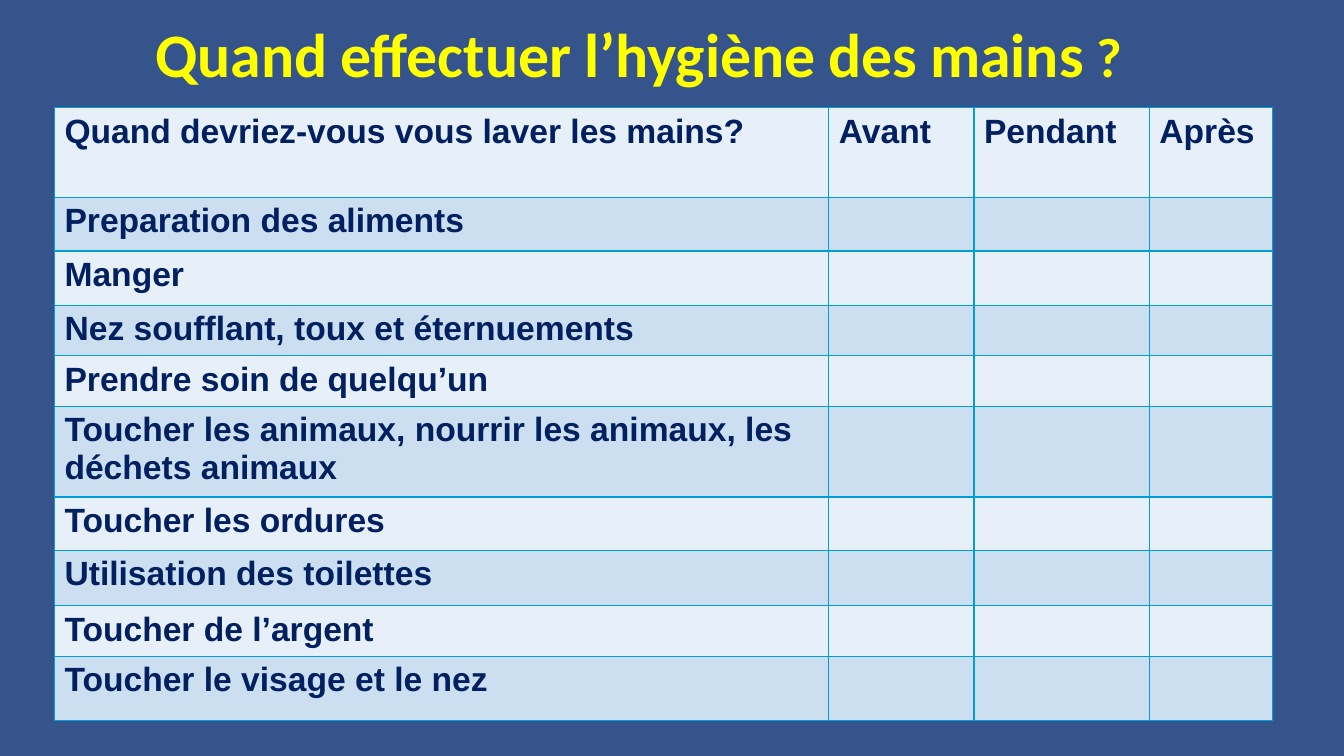
from lxml import etree
from pptx import Presentation
from pptx.dml.color import RGBColor
from pptx.enum import text
from pptx.oxml import ns
from pptx.util import Inches, Pt

# Content
TITLE = "Quand effectuer l’hygiène des mains ?"
HEADINGS = ["Quand devriez-vous vous laver les mains?", "Avant", "Pendant", "Après"]
ACTIVITIES = [
    ("Preparation des aliments", 0.53),
    ("Manger", 0.54),
    ("Nez soufflant, toux et éternuements", 0.5),
    ("Prendre soin de quelqu’un", 0.5),
    ("Toucher les animaux, nourrir les animaux, les déchets animaux", 0.89),
    ("Toucher les ordures", 0.53),
    ("Utilisation des toilettes", 0.55),
    ("Toucher de l’argent", 0.5),
    ("Toucher le visage et le nez", 0.64),
]
HEADING_HEIGHT = 0.89
COLUMN_WIDTHS = [7.68, 1.44, 1.74, 1.22]

BACKGROUND = RGBColor(0x36, 0x54, 0x8C)
YELLOW = RGBColor(0xFF, 0xFF, 0x00)
NAVY = RGBColor(0x00, 0x20, 0x60)
BANDS = [RGBColor(0xE7, 0xEF, 0xF8), RGBColor(0xCC, 0xDF, 0xF1)]
BORDER = RGBColor(0x00, 0x9D, 0xD9)


def style(font, name, size, color):
    font.name, font.size, font.bold = name, Pt(size), True
    font.color.rgb = color


def add_borders(cell):
    properties = cell._tc.get_or_add_tcPr()
    for position, side in enumerate(("lnL", "lnR", "lnT", "lnB")):
        line = etree.Element(ns.qn(f"a:{side}"), w=str(Pt(1)))
        fill = etree.SubElement(line, ns.qn("a:solidFill"))
        etree.SubElement(fill, ns.qn("a:srgbClr"), val=str(BORDER))
        properties.insert(position, line)


presentation = Presentation()
presentation.slide_width, presentation.slide_height = Inches(13.33), Inches(7.5)
slide = presentation.slides.add_slide(presentation.slide_layouts[6])
slide.background.fill.solid()
slide.background.fill.fore_color.rgb = BACKGROUND

# Title: gaps and the question mark are slightly smaller than the words
title_box = slide.shapes.add_textbox(Inches(1.44), Inches(0.17), Inches(9.85), Inches(0.8))
title_frame = title_box.text_frame
title_frame.word_wrap = True
title_frame.vertical_anchor = text.MSO_ANCHOR.MIDDLE
paragraph = title_frame.paragraphs[0]
paragraph.line_spacing = 0.9
for index, word in enumerate(TITLE.split(" ")):
    pieces = [(" ", 39.6)] if index else []
    pieces.append((word, 39.6 if word == "?" else 44.1))
    for piece, size in pieces:
        run = paragraph.add_run()
        run.text = piece
        style(run.font, "Calibri", size, YELLOW)

# Table of activities
rows = [HEADINGS] + [[name, "", "", ""] for name, _ in ACTIVITIES]
heights = [HEADING_HEIGHT] + [height for _, height in ACTIVITIES]
table = slide.shapes.add_table(
    len(rows), len(COLUMN_WIDTHS), Inches(0.54), Inches(1.07),
    Inches(sum(COLUMN_WIDTHS)), Inches(sum(heights))).table
for column, width in zip(table.columns, COLUMN_WIDTHS):
    column.width = Inches(width)
for row_index, (labels, height) in enumerate(zip(rows, heights)):
    table.rows[row_index].height = Inches(height)
    for column_index, label in enumerate(labels):
        cell = table.cell(row_index, column_index)
        cell.fill.solid()
        cell.fill.fore_color.rgb = BANDS[row_index % 2]
        add_borders(cell)
        if label:
            cell.text_frame.text = label
            style(cell.text_frame.paragraphs[0].runs[0].font, "Arial", 24, NAVY)

presentation.save("out.pptx")
